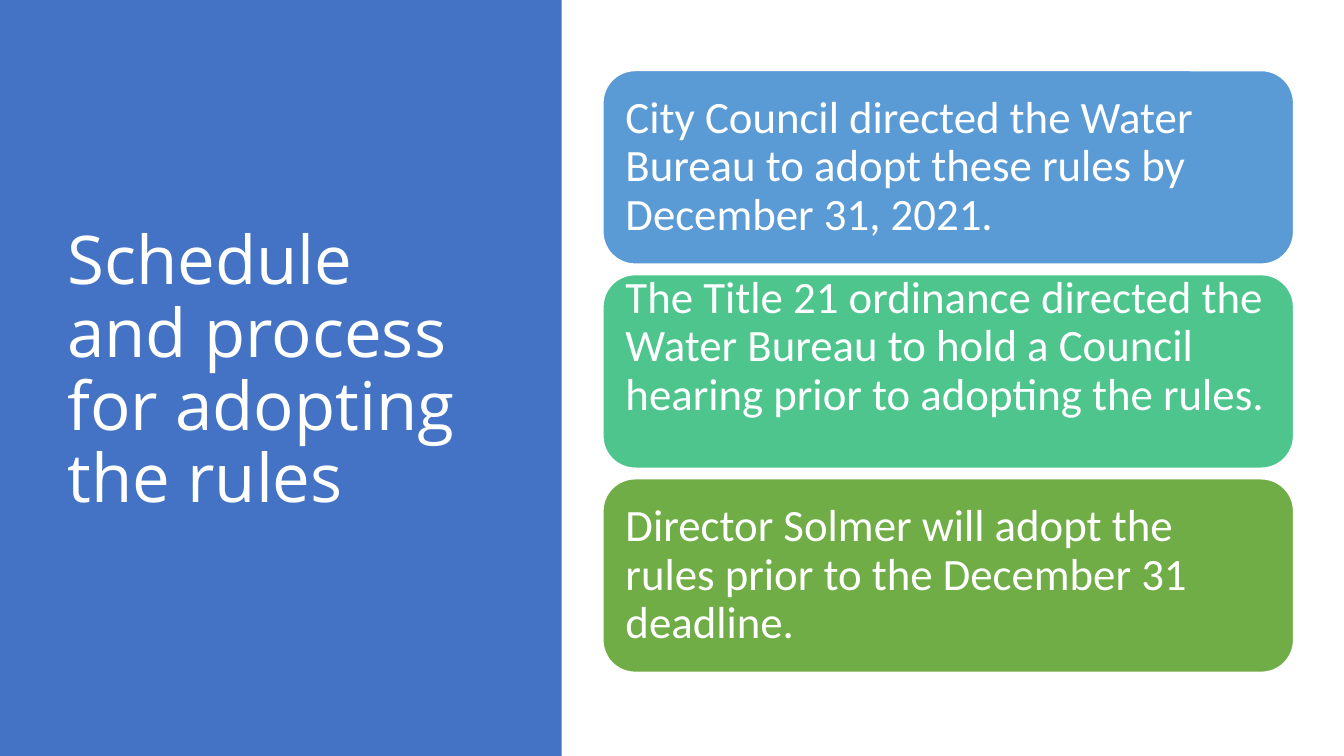
from dataclasses import dataclass

from pptx import Presentation
from pptx.dml.color import RGBColor
from pptx.enum.shapes import MSO_SHAPE
from pptx.enum.text import MSO_ANCHOR, PP_ALIGN
from pptx.util import Inches, Pt

RECT, ROUNDED = MSO_SHAPE.RECTANGLE, MSO_SHAPE.ROUNDED_RECTANGLE
MIDDLE, LEFT = MSO_ANCHOR.MIDDLE, PP_ALIGN.LEFT


@dataclass(frozen=True)
class Theme:
    panel: str = "4472C4"
    white: str = "FFFFFF"
    steps: tuple = ("5B9BD5", "4DC58D", "70AD47")
    title_font: str = "Open Sans"
    body_font: str = "Calibri"
    title_size: int = 48
    body_size: int = 32


THEME = Theme()
SLIDE_W, SLIDE_H = 13.33, 7.5

# Step column: equal cards separated by a fixed pitch
CARD_X, CARD_Y, CARD_W, CARD_H = 5.98, 0.7, 6.85, 1.92
CARD_PITCH = 2.025
CARD_INSET = 0.13
RAISED_INSET = 0.61  # lifts the middle text by half a line

# Text and bottom inset of each step
STEPS = [
    ("City Council directed the Water Bureau to adopt these rules by "
     "December 31, 2021.", CARD_INSET),
    ("The Title 21 ordinance directed the Water Bureau to hold a Council "
     "hearing prior to adopting the rules.", RAISED_INSET),
    ("Director Solmer will adopt the rules prior to the December 31 "
     "deadline.", CARD_INSET),
]


def add_block(s, kind, box, fill, line=None):
    """Add a filled shape, outlined only when a line colour is given."""
    sp = s.shapes.add_shape(kind, *map(Inches, box))
    sp.shadow.inherit = False
    sp.fill.solid()
    sp.fill.fore_color.rgb = RGBColor.from_string(fill)
    if line:
        sp.line.color.rgb = RGBColor.from_string(line)
        sp.line.width = Pt(1)
    else:
        sp.line.fill.background()
    return sp


def write(sp, text, font, size, **margins):
    """Write one left-aligned, vertically centred paragraph."""
    tf = sp.text_frame
    frame_format = {"word_wrap": True, "vertical_anchor": MIDDLE}
    for side, inset in margins.items():
        frame_format[f"margin_{side}"] = Inches(inset)
    for name, value in frame_format.items():
        setattr(tf, name, value)
    p = tf.paragraphs[0]
    p.alignment, p.line_spacing = LEFT, 0.9
    r = p.add_run()
    r.text = text
    for name, value in {"name": font, "size": Pt(size)}.items():
        setattr(r.font, name, value)
    r.font.color.rgb = RGBColor.from_string(THEME.white)


def add_title(s, text):
    sp = s.shapes.add_textbox(*map(Inches, (0.57, 0.68, 4.16, 6.02)))
    write(sp, text, THEME.title_font, THEME.title_size)


def add_step(s, row, text, bottom):
    box = (CARD_X, CARD_Y + row * CARD_PITCH, CARD_W, CARD_H)
    sp = add_block(s, ROUNDED, box, THEME.steps[row], THEME.white)
    write(sp, text, THEME.body_font, THEME.body_size, left=CARD_INSET,
          top=CARD_INSET, right=CARD_INSET, bottom=bottom)


def main():
    prs = Presentation()
    prs.slide_width, prs.slide_height = Inches(SLIDE_W), Inches(SLIDE_H)
    s = prs.slides.add_slide(prs.slide_layouts[6])

    # Title panel
    add_block(s, RECT, (0, 0, 5.57, SLIDE_H), THEME.panel)
    add_title(s, "Schedule and process for adopting the rules")

    # Steps
    for row, (text, bottom) in enumerate(STEPS):
        add_step(s, row, text, bottom)

    prs.save("out.pptx")


if __name__ == "__main__":
    main()
